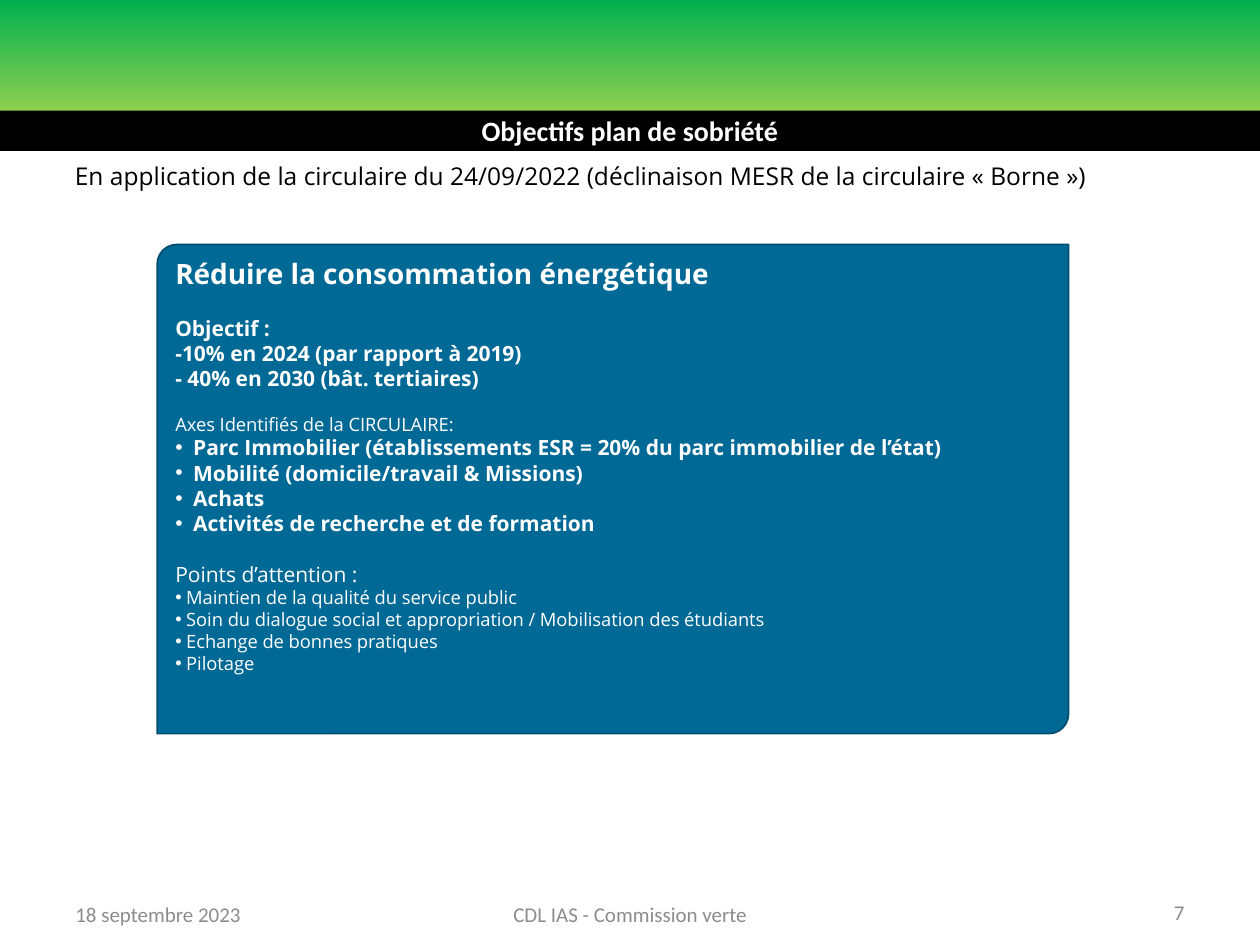
"""Build the slide on the goals of the energy sobriety plan."""
from lxml import etree
from pptx import Presentation
from pptx import util as u
from pptx.dml.color import RGBColor
from pptx.enum import shapes, text
from pptx.oxml.ns import qn


def color(value):
    return RGBColor.from_string(value)


def style(para, font, size, value, bold=False):
    para.font.name = font
    para.font.size = u.Pt(size)
    para.font.bold = bold
    para.font.color.rgb = color(value)


deck = Presentation()
deck.slide_width, deck.slide_height = u.Cm(25.4), u.Cm(19.05)
page = deck.slides.add_slide(deck.slide_layouts[6])

banner = page.shapes.add_shape(shapes.MSO_SHAPE.RECTANGLE, 0, 0, u.Cm(25.4), u.Cm(2.29))
banner.shadow.inherit = False
banner.line.fill.background()
banner.fill.gradient()
banner.fill.gradient_angle = 90
for stop, value in zip(banner.fill.gradient_stops, ("92D050", "00B050")):
    stop.color.rgb = color(value)

title = page.shapes.add_shape(
    shapes.MSO_SHAPE.ROUNDED_RECTANGLE, 0, u.Cm(2.23), u.Cm(25.4), u.Cm(0.81))
title.adjustments[0] = 0
title.shadow.inherit = False
title.fill.solid()
title.fill.fore_color.rgb = color("000000")
title.line.fill.background()
title.text_frame.word_wrap = False
title.text_frame.vertical_anchor = text.MSO_ANCHOR.MIDDLE
para = title.text_frame.paragraphs[0]
para.text = "Objectifs plan de sobriété"
para.alignment = text.PP_ALIGN.CENTER
style(para, "Calibri", 16, "FFFFFF", True)

panel = page.shapes.add_shape(
    shapes.MSO_SHAPE.ROUND_2_DIAG_RECTANGLE, u.Cm(3.17), u.Cm(4.93), u.Cm(18.37), u.Cm(9.86))
panel.adjustments[0] = 0.04
panel.adjustments[1] = 0
panel.shadow.inherit = False
panel.fill.solid()
panel.fill.fore_color.rgb = color("006996")
panel.line.color.rgb = color("004E6F")
panel.line.width = u.Pt(1)
frame = panel.text_frame
frame.word_wrap = True
frame.vertical_anchor = text.MSO_ANCHOR.TOP

lines = [
    ("Réduire la consommation énergétique", 16, True, 0, 0),
    ("Objectif :", 12, True, 14.5, 0),
    ("-10% en 2024 (par rapport à 2019)", 12, True, 0, 0),
    ("- 40% en 2030 (bât. tertiaires)", 12, True, 0, 0),
    ("Axes Identifiés de la CIRCULAIRE:", 10.5, False, 12.5, 0),
    ("Parc Immobilier (établissements ESR = 20% du parc immobilier de l’état)", 12, True, 0, 0.36),
    ("Mobilité (domicile/travail & Missions)", 12, True, 0, 0.36),
    ("Achats", 12, True, 0, 0.36),
    ("Activités de recherche et de formation", 12, True, 0, 0.36),
    ("Points d’attention :", 12, False, 14.5, 0),
    ("Maintien de la qualité du service public", 10.5, False, 0, 0.22),
    ("Soin du dialogue social et appropriation / Mobilisation des étudiants", 10.5, False, 0, 0.22),
    ("Echange de bonnes pratiques", 10.5, False, 0, 0.22),
    ("Pilotage", 10.5, False, 0, 0.22),
]
for number, (wording, size, bold, gap, indent) in enumerate(lines):
    para = frame.add_paragraph() if number else frame.paragraphs[0]
    para.text = wording
    para.alignment = text.PP_ALIGN.LEFT
    para.space_before = u.Pt(gap)
    if indent:
        props = para._p.get_or_add_pPr()
        props.set("marL", str(u.Cm(indent)))
        props.set("indent", str(-u.Cm(indent)))
        etree.SubElement(props, qn("a:buFont")).set("typeface", "Arial")
        etree.SubElement(props, qn("a:buChar")).set("char", "•")
    style(para, "Open Sans", size, "FFFFFF", bold)

left, center, right = text.PP_ALIGN.LEFT, text.PP_ALIGN.CENTER, text.PP_ALIGN.RIGHT
top, middle = text.MSO_ANCHOR.TOP, text.MSO_ANCHOR.MIDDLE
labels = [
    ("En application de la circulaire du 24/09/2022 (déclinaison MESR de la circulaire « Borne »)",
     1.26, 3.12, 24.51, 0.86, left, top, "Open Sans", 14, "000000"),
    ("18 septembre 2023", 1.27, 17.91, 5.92, 1.02, left, middle, "Calibri", 12, "8C8C8C"),
    ("CDL IAS - Commission verte", 8.68, 17.91, 8.05, 1.02, center, middle, "Calibri", 12, "8C8C8C"),
    ("7", 18.21, 17.88, 5.92, 1.02, right, middle, "Calibri", 12, "8C8C8C"),
]
for wording, x, y, width, height, align, anchor, font, size, value in labels:
    box = page.shapes.add_textbox(u.Cm(x), u.Cm(y), u.Cm(width), u.Cm(height))
    box.text_frame.word_wrap = True
    box.text_frame.vertical_anchor = anchor
    para = box.text_frame.paragraphs[0]
    para.text = wording
    para.alignment = align
    style(para, font, size, value)

deck.save("out.pptx")
